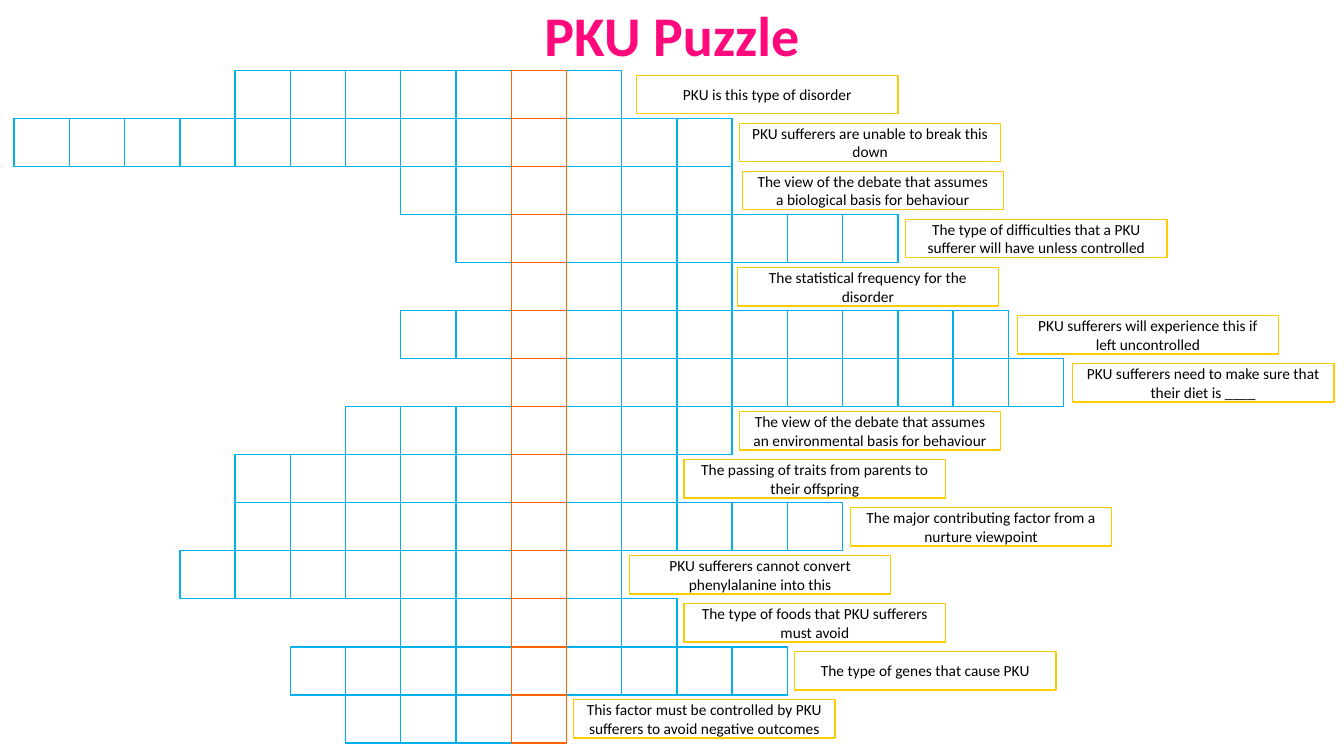
from copy import deepcopy
from pptx import Presentation
from pptx.dml.color import RGBColor
from pptx.enum.shapes import MSO_SHAPE
from pptx.enum.text import MSO_ANCHOR, MSO_AUTO_SIZE, PP_ALIGN
from pptx.util import Inches, Pt

KEY = 9
ROWS = [
    (4, 11, 0.27, "PKU is this type of disorder"),
    (0, 13, 0.13, "PKU sufferers are unable to break this down"),
    (7, 13, 0.18, "The view of the debate that assumes a biological basis for behaviour"),
    (8, 16, 0.14, "The type of difficulties that a PKU sufferer will have unless controlled"),
    (9, 13, 0.09, "The statistical frequency for the disorder"),
    (7, 18, 0.16, "PKU sufferers will experience this if left uncontrolled"),
    (9, 19, 0.16, "PKU sufferers need to make sure that their diet is ____"),
    (6, 13, 0.13, "The view of the debate that assumes an environmental basis for behaviour"),
    (4, 12, 0.13, "The passing of traits from parents to their offspring"),
    (4, 15, 0.14, "The major contributing factor from a nurture viewpoint"),
    (3, 11, 0.14, "PKU sufferers cannot convert phenylalanine into this"),
    (7, 12, 0.13, "The type of foods that PKU sufferers must avoid"),
    (5, 14, 0.13, "The type of genes that cause PKU"),
    (6, 10, 0.13, "This factor must be controlled by PKU sufferers to avoid negative outcomes"),
]


def hue(code):
    """Turn a hex string into a colour."""
    return RGBColor.from_string(code)


class Board:
    """Puzzle style and slide, measured in grid columns and rows."""

    font = "Calibri"
    left, top = 0.14, 0.7
    col, row = (10.55 - left) / 19, (7.37 - top) / 14
    blue, orange, gold, pink = "00B0F0", "FF6600", "FFCC00", "FF097C"

    def __init__(self, deck):
        """Add a blank slide to the deck."""
        self.deck = deck
        self.slide = deck.slides.add_slide(deck.slide_layouts[6])

    def box(self, x, y, wide, high, edge):
        """Draw a white box at a grid place."""
        shape = self.slide.shapes.add_shape(
            MSO_SHAPE.RECTANGLE,
            Inches(self.left + x * self.col), Inches(self.top + y * self.row),
            Inches(wide * self.col), Inches(high * self.row))
        shape.shadow.inherit = False
        shape.fill.solid()
        shape.fill.fore_color.rgb = hue("FFFFFF")
        shape.line.color.rgb = hue(edge)
        shape.line.width = Pt(1)
        return shape

    def label(self, shape, text, size):
        """Put centred text in a shape and return its run."""
        frame = shape.text_frame
        frame.word_wrap = True
        frame.text = text
        para = frame.paragraphs[0]
        para.alignment = PP_ALIGN.CENTER
        run = para.runs[0]
        run.font.name = self.font
        run.font.size = Pt(size)
        return run

    def clue(self, x, y, text):
        """Draw a clue centred in its row."""
        high = 0.8
        shape = self.box(x, y + (1 - high) / 2, 4.73, high, self.gold)
        shape.text_frame.vertical_anchor = MSO_ANCHOR.MIDDLE
        self.label(shape, text, 11).font.color.rgb = hue("000000")

    def title(self, text):
        """Set the shaded title across the slide."""
        wide, high = self.deck.slide_width, self.deck.slide_height
        shape = self.slide.shapes.add_textbox(0, Inches(-0.04), wide, int(high * 0.103))
        run = self.label(shape, text, 40)
        shape.text_frame.auto_size = MSO_AUTO_SIZE.SHAPE_TO_FIT_TEXT
        run.font.bold = True
        fill = run.font.fill
        fill.gradient()
        fill.gradient_angle = 270
        stops = run._r.rPr.gradFill.gsLst
        stops.append(deepcopy(stops[0]))
        shades = [(0, "FF87B8"), (0.75, self.pink), (1, "C9006F")]
        for stop, (place, code) in zip(fill.gradient_stops, shades):
            stop.position = place
            stop.color.rgb = hue(code)


def main():
    """Build the puzzle slide."""
    deck = Presentation()
    deck.slide_width, deck.slide_height = Inches(13.33), Inches(7.5)
    board = Board(deck)
    for y, (start, stop, _, _) in enumerate(ROWS):
        for x in range(start, stop):
            if x != KEY:
                board.box(x, y, 1, 1, board.blue)
    for y in range(len(ROWS)):
        board.box(KEY, y, 1, 1, board.orange)
    for y, (_, stop, gap, text) in enumerate(ROWS):
        board.clue(stop + gap, y, text)
    board.title("PKU Puzzle")
    deck.save("out.pptx")


if __name__ == "__main__":
    main()
